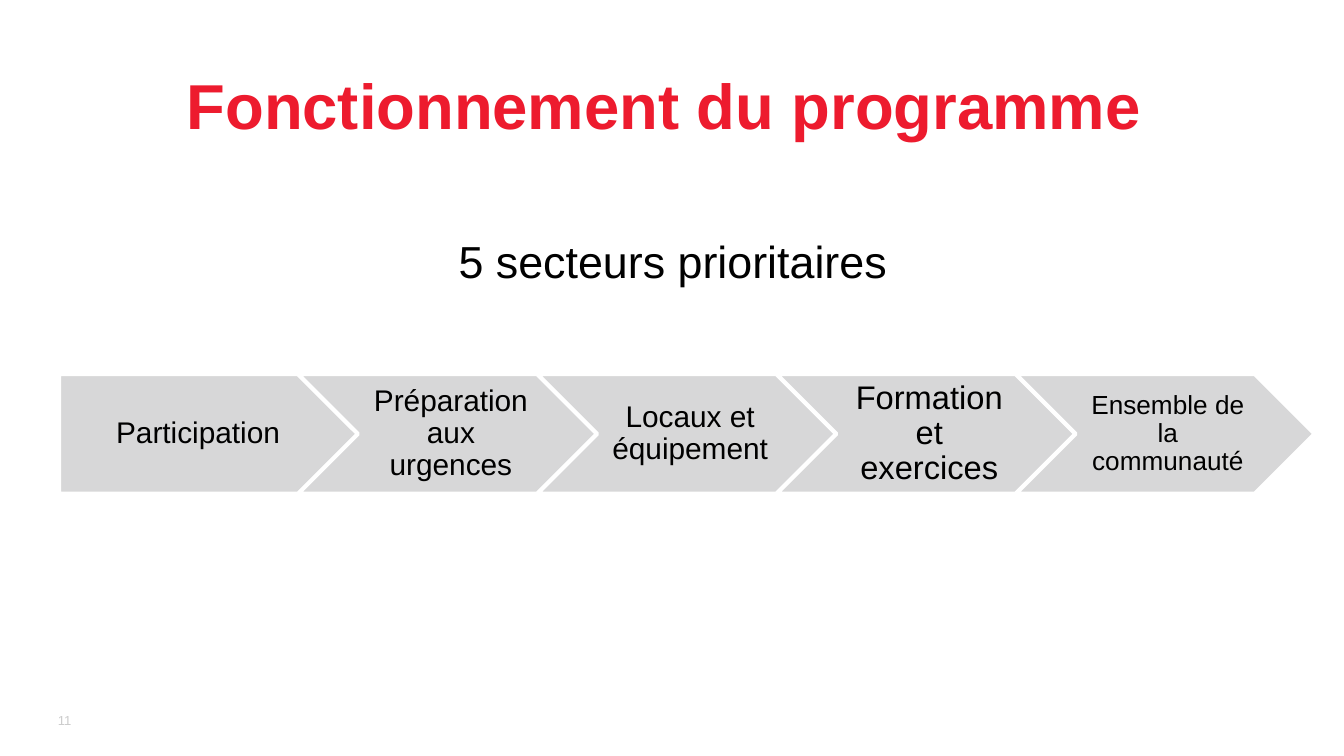
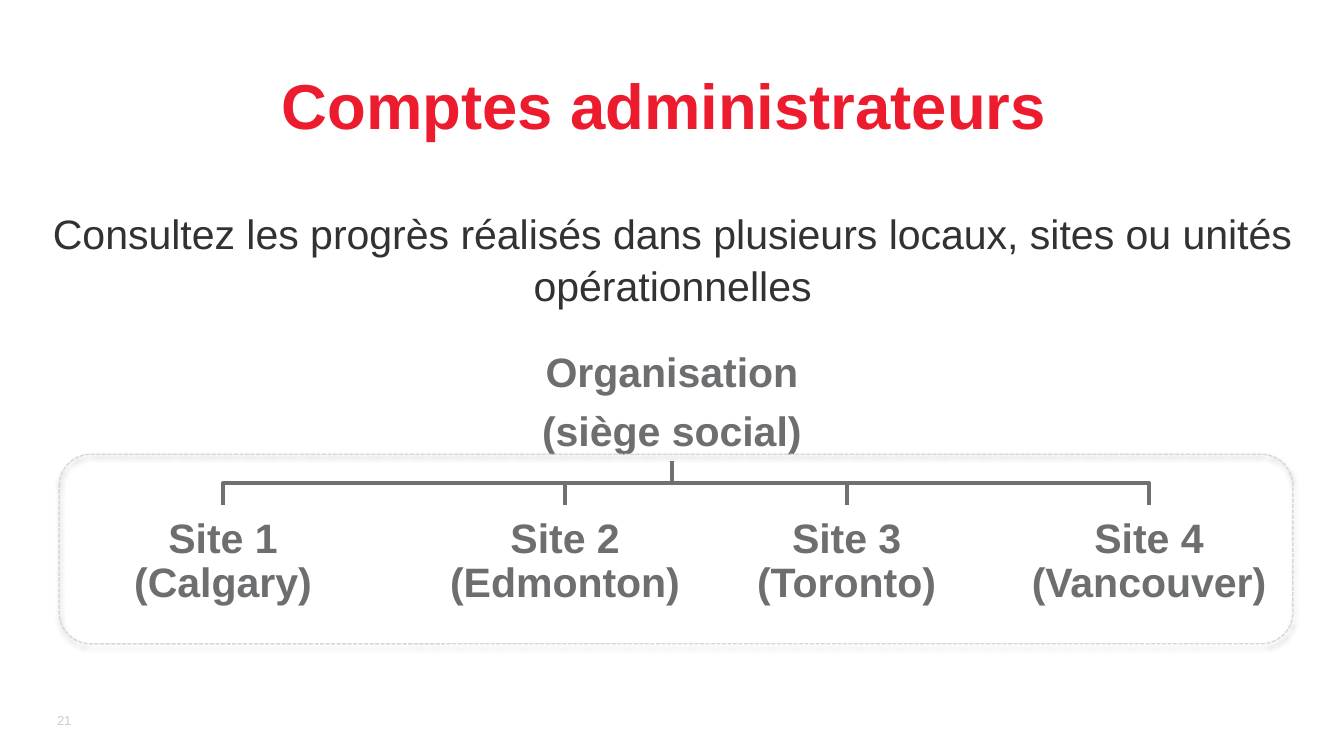
from dataclasses import dataclass

import lxml.etree
import pptx
import pptx.dml.color
import pptx.enum.dml
import pptx.enum.shapes
import pptx.enum.text
import pptx.oxml.ns
import pptx.util

WIDTH = pptx.util.Inches(10)
HEIGHT = pptx.util.Inches(5.625)
FONT = "Arial"
HUES = {
    "red": "ED1B2E",
    "black": "000000",
    "ink": "313231",
    "slate": "6D6E70",
    "branch": "6F7072",
    "band": "D7D7D8",
    "pale": "CCCCCC",
    "white": "FFFFFF",
}
KINDS = pptx.enum.shapes.MSO_SHAPE
ALIGN = pptx.enum.text.PP_ALIGN
ANCHOR = pptx.enum.text.MSO_ANCHOR


@dataclass(frozen=True)
class Area:
    """Percent shares of the slide's width and height."""

    left: float
    top: float
    width: float
    height: float

    def place(self) -> tuple:
        return (across(self.left), down(self.top),
                across(self.width), down(self.height))


@dataclass(frozen=True)
class Sector:
    label: str
    size: float = 16
    inset: tuple = (0.07, 0.05, 0.02, 0.05)


@dataclass(frozen=True)
class Site:
    label: str
    left: float
    width: float

    @property
    def middle(self) -> float:
        return self.left + self.width / 2


TITLE = Area(4.4, 7.11, 90, 8)
NUMBER = Area(3.1, 92.62, 3.2, 5.33)
LEAD = Area(12.1, 29.5, 75.9, 8.9)
BODY = Area(3.5, 26.13, 93.1, 17.42)
ARROW = Area(4.4, 49.5, 22.2, 15.8)
STEP = 17.8
OFFICE = Area(36.3, 46.05, 27.4, 14.75)
FRAME = Area(4.4, 60.1, 91.8, 25.07)
SITE_TOP = 67.02
TIGHT = (0.02, 0.02, 0.02, 0.02)

SECTORS = (
    Sector("Participation", inset=(0.09, 0.05, 0.02, 0.05)),
    Sector("Préparation aux urgences"),
    Sector("Locaux et équipement"),
    Sector("Formation et exercices", 17.5, (0.08, 0.05, 0.03, 0.05)),
    Sector("Ensemble de la communauté", 14, (0.06, 0.04, 0.02, 0.04)),
)
SITES = (
    Site("Site 1\n(Calgary)", 3.8, 25.6),
    Site("Site 2\n(Edmonton)", 32.9, 18.3),
    Site("Site 3\n(Toronto)", 54.7, 16.6),
    Site("Site 4\n(Vancouver)", 74.8, 21.4),
)


def across(share: float) -> int:
    return round(WIDTH * share / 100)


def down(share: float) -> int:
    return round(HEIGHT * share / 100)


def hue(name: str):
    return pptx.dml.color.RGBColor.from_string(HUES[name])


def write(shape, *lines: str, size: float, color: str = "black",
          bold: bool = False, align=ALIGN.CENTER, anchor=ANCHOR.TOP,
          inset: tuple = (0.1, 0.05, 0.1, 0.05),
          leading: float = 1.0, after: float = 0) -> None:
    frame = shape.text_frame
    frame.word_wrap = True
    frame.vertical_anchor = anchor
    (frame.margin_left, frame.margin_top, frame.margin_right,
     frame.margin_bottom) = map(pptx.util.Inches, inset)
    for index, line in enumerate(lines):
        para = frame.add_paragraph() if index else frame.paragraphs[0]
        para.alignment = align
        para.line_spacing = leading
        para.space_after = pptx.util.Pt(after)
        for part, text in enumerate(line.split("\n")):
            if part:
                para.add_line_break()
            run = para.add_run()
            run.text = text
            font = run.font
            font.name = FONT
            font.size = pptx.util.Pt(size)
            font.bold = bold
            font.color.rgb = hue(color)


def note(slide, area: Area, text: str, **style) -> None:
    write(slide.shapes.add_textbox(*area.place()), text, **style)


def paint(shape, line: str, weight: float = 2, fill: str = "") -> None:
    shape.shadow.inherit = False
    if fill:
        shape.fill.solid()
        shape.fill.fore_color.rgb = hue(fill)
    else:
        shape.fill.background()
    shape.line.color.rgb = hue(line)
    shape.line.width = pptx.util.Pt(weight)


def block(slide, kind, area: Area, line: str = "white", **look):
    shape = slide.shapes.add_shape(kind, *area.place())
    paint(shape, line, **look)
    return shape


def start(deck, title: str, number: str):
    slide = deck.slides.add_slide(deck.slide_layouts[6])
    note(slide, TITLE, title, size=34, color="red", bold=True,
         inset=(0, 0.09, 0, 0.05))
    note(slide, NUMBER, number, size=7, color="pale",
         align=ALIGN.RIGHT, anchor=ANCHOR.MIDDLE)
    return slide


def label(shape, *lines: str, size: float, inset: tuple, **style) -> None:
    write(shape, *lines, size=size, inset=inset, anchor=ANCHOR.MIDDLE,
          leading=0.9, after=round(size * 0.35, 1), **style)


def branch(slide, site: Site) -> None:
    top = OFFICE.top + OFFICE.height
    bend = (top + SITE_TOP) / 2
    path = [(50, bend), (site.middle, bend), (site.middle, SITE_TOP)]
    pen = slide.shapes.build_freeform(across(50), down(top))
    pen.add_line_segments([(across(x), down(y)) for x, y in path],
                          close=False)
    paint(pen.convert_to_shape(), "branch")


def shade(shape) -> None:
    tag = pptx.oxml.ns.qn
    effects = shape._element.spPr.find(tag("a:effectLst"))
    cast = lxml.etree.SubElement(
        effects, tag("a:outerShdw"), blurRad=str(pptx.util.Pt(3.1)),
        dist=str(pptx.util.Pt(1.8)), dir="5400000", rotWithShape="0")
    tone = lxml.etree.SubElement(cast, tag("a:srgbClr"), val=HUES["black"])
    lxml.etree.SubElement(tone, tag("a:alpha"), val="35000")


def sectors(deck) -> None:
    slide = start(deck, "Fonctionnement du programme", "11")
    for index, sector in enumerate(SECTORS):
        kind = KINDS.CHEVRON if index else KINDS.PENTAGON
        area = Area(ARROW.left + index * STEP, ARROW.top,
                    ARROW.width, ARROW.height)
        arrow = block(slide, kind, area, fill="band")
        label(arrow, sector.label, size=sector.size, inset=sector.inset)
    note(slide, LEAD, "5 secteurs prioritaires", size=24,
         inset=(0.1, 0.08, 0.1, 0.05))


def accounts(deck) -> None:
    slide = start(deck, "Comptes administrateurs", "21")
    note(slide, BODY,
         "Consultez les progrès réalisés dans plusieurs locaux, "
         "sites ou unités opérationnelles",
         size=22, color="ink", inset=(0, 0.07, 0, 0.05),
         leading=1.04, after=12)
    for site in SITES:
        branch(slide, site)
    style = dict(size=22, color="slate", bold=True, inset=TIGHT)
    office = block(slide, KINDS.RECTANGLE, OFFICE)
    label(office, "Organisation", "(siège social)", **style)
    for site in SITES:
        area = Area(site.left, SITE_TOP, site.width, OFFICE.height)
        label(block(slide, KINDS.RECTANGLE, area), site.label, **style)
    frame = block(slide, KINDS.ROUNDED_RECTANGLE, FRAME, "band", weight=0.75)
    frame.line.dash_style = pptx.enum.dml.MSO_LINE.SQUARE_DOT
    frame.line._ln.prstDash.set("val", "sysDash")
    shade(frame)


def main() -> None:
    deck = pptx.Presentation()
    deck.slide_width, deck.slide_height = WIDTH, HEIGHT
    sectors(deck)
    accounts(deck)
    deck.save("out.pptx")


if __name__ == "__main__":
    main()
